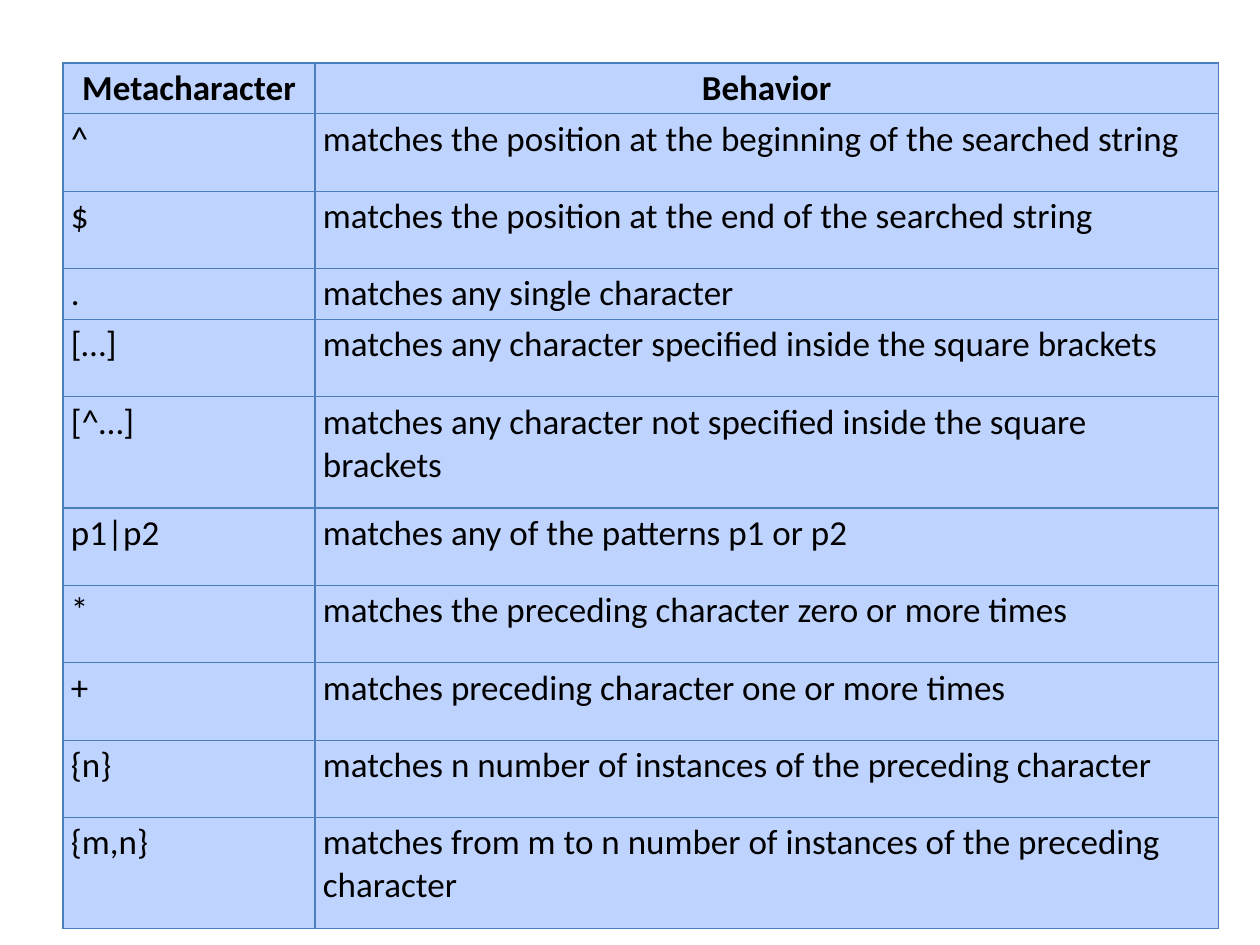
"""Build a slide with a table of regular expression metacharacters."""
from pptx import Presentation
from pptx.dml.color import RGBColor
from pptx.enum.text import MSO_ANCHOR as ANCHOR, PP_ALIGN as ALIGN
from pptx.oxml import parse_xml
from pptx.oxml.ns import nsdecls
from pptx.util import Cm, Pt

SHORT, MEDIUM, TALL = 1.02, 1.56, 2.24
COLUMNS = [5.08, 18.21]
LEFT, TOP = 1.27, 1.27
INSET_X, INSET_Y = 0.16, 0.08
FILL, BORDER, TEXT = "BFD3FF", "4B7EBC", "000000"
ROWS = [
    ("Metacharacter", "Behavior", SHORT),
    ("^", "matches the position at the beginning of the searched string", MEDIUM),
    ("$", "matches the position at the end of the searched string", MEDIUM),
    (".", "matches any single character", SHORT),
    ("[…]", "matches any character specified inside the square brackets", MEDIUM),
    ("[^…]", "matches any character not specified inside the square brackets", TALL),
    ("p1|p2", "matches any of the patterns p1 or p2", MEDIUM),
    ("*", "matches the preceding character zero or more times", MEDIUM),
    ("+", "matches preceding character one or more times", MEDIUM),
    ("{n}", "matches n number of instances of the preceding character", MEDIUM),
    ("{m,n}", "matches from m to n number of instances of the preceding character", TALL),
]


def paint(target, color):
    target.solid()
    target.fore_color.rgb = RGBColor.from_string(color)


def add_borders(cell):
    props = cell._tc.get_or_add_tcPr()
    for i, side in enumerate(("lnL", "lnR", "lnT", "lnB")):
        props.insert(i, parse_xml(
            f'<a:{side} {nsdecls("a")} w="{Pt(0.75)}"><a:solidFill>'
            f'<a:srgbClr val="{BORDER}"/></a:solidFill></a:{side}>'))


def fill_cell(cell, text, header):
    cell.margin_left = cell.margin_right = Cm(INSET_X)
    cell.margin_top = cell.margin_bottom = Cm(INSET_Y)
    cell.vertical_anchor = ANCHOR.MIDDLE if header else ANCHOR.TOP
    paint(cell.fill, FILL)
    add_borders(cell)
    p = cell.text_frame.paragraphs[0]
    p.text = text
    p.alignment = ALIGN.CENTER if header else ALIGN.LEFT
    font = p.runs[0].font
    font.name, font.size, font.bold = "Calibri", Pt(20), header
    paint(font.fill, TEXT)


def main():
    prs = Presentation()
    prs.slide_width, prs.slide_height = Cm(25.4), Cm(19.05)
    s = prs.slides.add_slide(prs.slide_layouts[6])
    height = sum(row[-1] for row in ROWS)
    table = s.shapes.add_table(len(ROWS), len(COLUMNS), Cm(LEFT), Cm(TOP),
                               Cm(sum(COLUMNS)), Cm(height)).table
    for column, width in zip(table.columns, COLUMNS):
        column.width = Cm(width)
    for i, (*texts, row_height) in enumerate(ROWS):
        table.rows[i].height = Cm(row_height)
        for j, text in enumerate(texts):
            fill_cell(table.cell(i, j), text, i == 0)
    prs.save("out.pptx")


if __name__ == "__main__":
    main()
